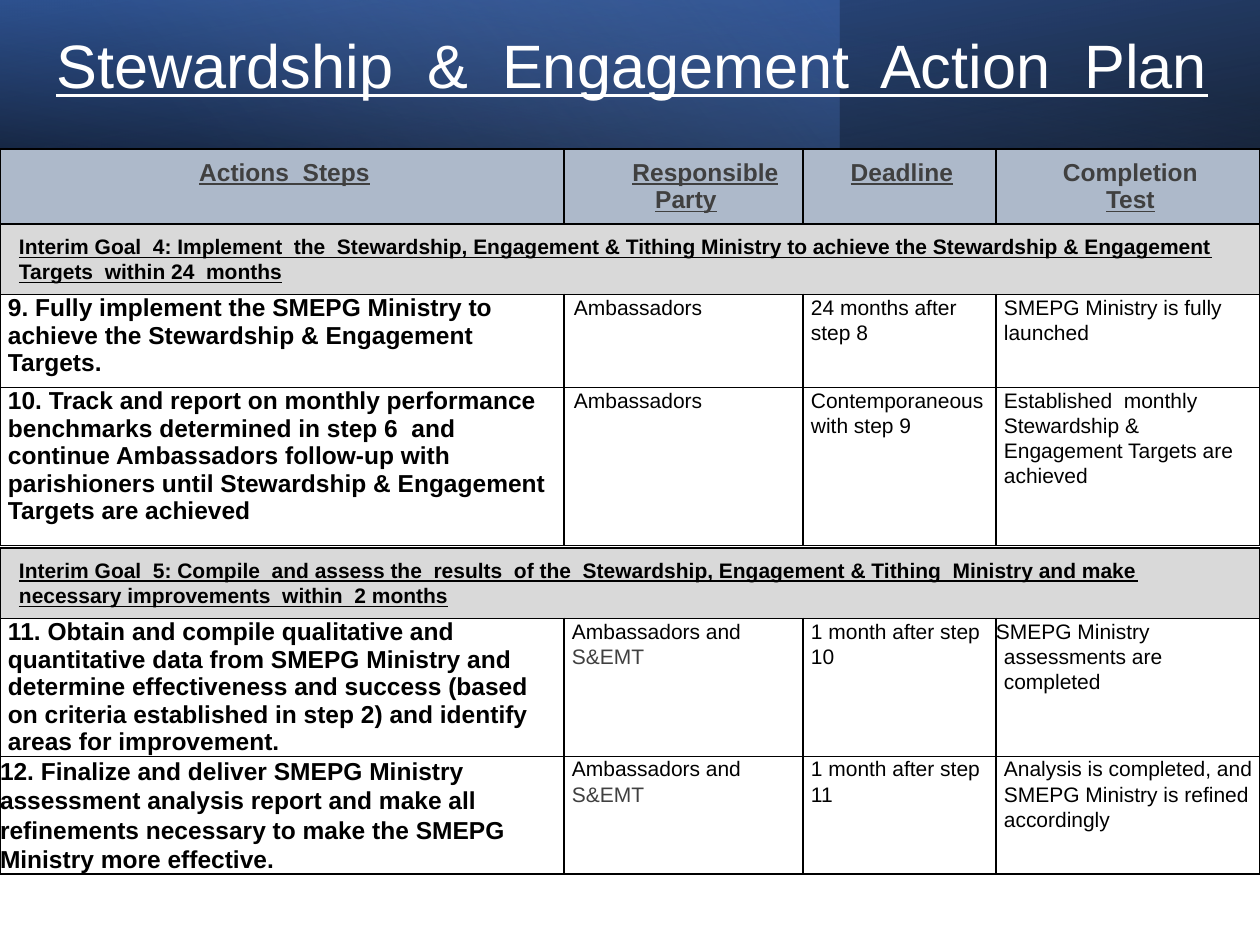
"""Build the Stewardship & Engagement Action Plan slide."""
from lxml import etree
from pptx import Presentation
from pptx import util as u
from pptx.dml.color import RGBColor
from pptx.enum import shapes, text
from pptx.oxml import ns

PX = 914400 // 126
BLACK, GRAY = "000000", "404040"
HEADER, GOAL, STEP, PLAIN = "header", "goal", "step", "plain"
COLUMNS = [564, 239, 193, 264]


def rgb(code):
    return RGBColor.from_string(code)


def write(paragraph, words, size, color, bold=False, underline=False):
    for i, line in enumerate(words.split("\n")):
        if i:
            paragraph.add_line_break()
        run = paragraph.add_run()
        run.text = line
        font = run.font
        font.name, font.size, font.bold, font.underline = "Arial", u.Pt(size), bold, underline
        font.color.rgb = rgb(color)


deck = Presentation()
deck.slide_width, deck.slide_height = 1260 * PX, 945 * PX
slide = deck.slides.add_slide(deck.slide_layouts[6])

bands = [
    (1260, 180, True, 100, [(0, BLACK, 96), (100, "2F5597", 100)]),
    (840, 0, False, 140, [(0, "4472C4", 41), (74, "8FAADC", 0)]),
    (1260, 0, True, 260, [(0, BLACK, 63), (78, "4472C4", 15)]),
]
for width, rotation, flipped, angle, stops in bands:
    band = slide.shapes.add_shape(shapes.MSO_SHAPE.RECTANGLE, 0, 0, width * PX, 217 * PX)
    band.shadow.inherit = False
    band.rotation = rotation
    band.line.fill.background()
    band.fill.gradient()
    props = band.element.spPr
    if flipped:
        props.find(ns.qn("a:xfrm")).set("flipH", "1")
    gradient = props.find(ns.qn("a:gradFill"))
    for child in list(gradient):
        gradient.remove(child)
    stop_list = etree.SubElement(gradient, ns.qn("a:gsLst"))
    for position, color, opacity in stops:
        stop = etree.SubElement(stop_list, ns.qn("a:gs"), pos=str(position * 1000))
        tint = etree.SubElement(stop, ns.qn("a:srgbClr"), val=color)
        etree.SubElement(tint, ns.qn("a:alpha"), val=str(opacity * 1000))
    etree.SubElement(gradient, ns.qn("a:lin"), ang=str(angle * 60000), scaled="0")

team = [("Ambassadors and ", BLACK), ("S&EMT", GRAY)]
plans = [
    (149, [
        (74, HEADER, ["Actions  Steps", "Responsible Party", "Deadline", "Completion\nTest"]),
        (69, GOAL, ["Interim Goal  4: Implement  the  Stewardship, Engagement & Tithing Ministry to achieve "
                    "the Stewardship & Engagement Targets  within 24  months"]),
        (93, STEP, ["9. Fully implement the SMEPG Ministry to achieve the Stewardship & Engagement Targets.",
                    "Ambassadors", "24 months after step 8", "SMEPG Ministry is fully launched"]),
        (158, STEP, ["10. Track and report on monthly performance benchmarks determined in step 6  and continue "
                     "Ambassadors follow-up with parishioners until Stewardship & Engagement Targets are achieved",
                     "Ambassadors", "Contemporaneous with step 9",
                     "Established  monthly Stewardship & Engagement Targets are achieved"]),
    ]),
    (548, [
        (69, GOAL, ["Interim Goal  5: Compile  and assess the  results  of the  Stewardship, Engagement & Tithing  "
                    "Ministry and make necessary improvements  within  2 months"]),
        (138, STEP, ["11. Obtain and compile qualitative and quantitative data from SMEPG Ministry and determine "
                     "effectiveness and success (based on criteria established in step 2) and identify areas "
                     "for improvement.", team, "1 month after step 10",
                     "SMEPG Ministry\nassessments are completed"]),
        (118, PLAIN, ["12. Finalize and deliver SMEPG Ministry assessment analysis report and make all "
                      "refinements necessary to make the SMEPG Ministry more effective.", team,
                      "1 month after step 11",
                      "Analysis is completed, and SMEPG Ministry is refined accordingly"]),
    ]),
]
fills = {HEADER: "ADB9CA", GOAL: "D9D9D9"}

for top, rows in plans:
    height = sum(row[0] for row in rows)
    plan = slide.shapes.add_table(len(rows), 4, 0, top * PX, 1260 * PX, height * PX).table
    plan.first_row = plan.horz_banding = False
    for column, width in zip(plan.columns, COLUMNS):
        column.width = width * PX
    for r, (row_height, kind, entries) in enumerate(rows):
        plan.rows[r].height = row_height * PX
        if kind == GOAL:
            plan.cell(r, 0).merge(plan.cell(r, 3))
        for c in range(4):
            cell = plan.cell(r, c)
            insets = (19, 10, 14, 10) if kind in fills else (0, 0, 0, 0)
            cell.margin_left, cell.margin_top, cell.margin_right, cell.margin_bottom = [n * PX for n in insets]
            borders = cell._tc.get_or_add_tcPr()
            for side in ("a:lnL", "a:lnR", "a:lnT", "a:lnB"):
                edge = etree.SubElement(borders, ns.qn(side), w=str(u.Pt(1)))
                ink = etree.SubElement(edge, ns.qn("a:solidFill"))
                etree.SubElement(ink, ns.qn("a:srgbClr"), val=BLACK)
            if kind in fills:
                cell.fill.solid()
                cell.fill.fore_color.rgb = rgb(fills[kind])
            else:
                cell.fill.background()
            if c >= len(entries):
                continue
            entry, frame = entries[c], cell.text_frame
            if kind == HEADER:
                for i, line in enumerate(entry.split("\n")):
                    paragraph = frame.add_paragraph() if i else frame.paragraphs[0]
                    paragraph.alignment = text.PP_ALIGN.CENTER
                    write(paragraph, line, 14, GRAY, True, line != "Completion")
                    if c == 1:
                        paragraph._p.get_or_add_pPr().set("indent", str(39 * PX))
                continue
            paragraph = frame.paragraphs[0]
            paragraph.line_spacing = 1.0 if kind == STEP and c == 0 else 1.07
            if kind == GOAL:
                write(paragraph, entry, 12, BLACK, True, True)
                continue
            margin = 0 if kind == PLAIN and c == 0 else 10 if entry == "Ambassadors" else 8
            layout = paragraph._p.get_or_add_pPr()
            layout.set("marL", str(margin * PX))
            layout.set("indent", str(-margin * PX if "\n" in entry else 0))
            for words, color in entry if entry is team else [(entry, BLACK)]:
                write(paragraph, words, 12 if c else 14, color, c == 0)

title = slide.shapes.add_textbox(44 * PX, -11 * PX, 1202 * PX, 160 * PX).text_frame
title.word_wrap = True
title.vertical_anchor = text.MSO_ANCHOR.MIDDLE
heading = title.paragraphs[0]
heading.line_spacing, heading.space_after = 0.9, u.Pt(6)
write(heading, "Stewardship  &  Engagement  Action  Plan", 35, "FFFFFF", underline=True)

deck.save("out.pptx")
